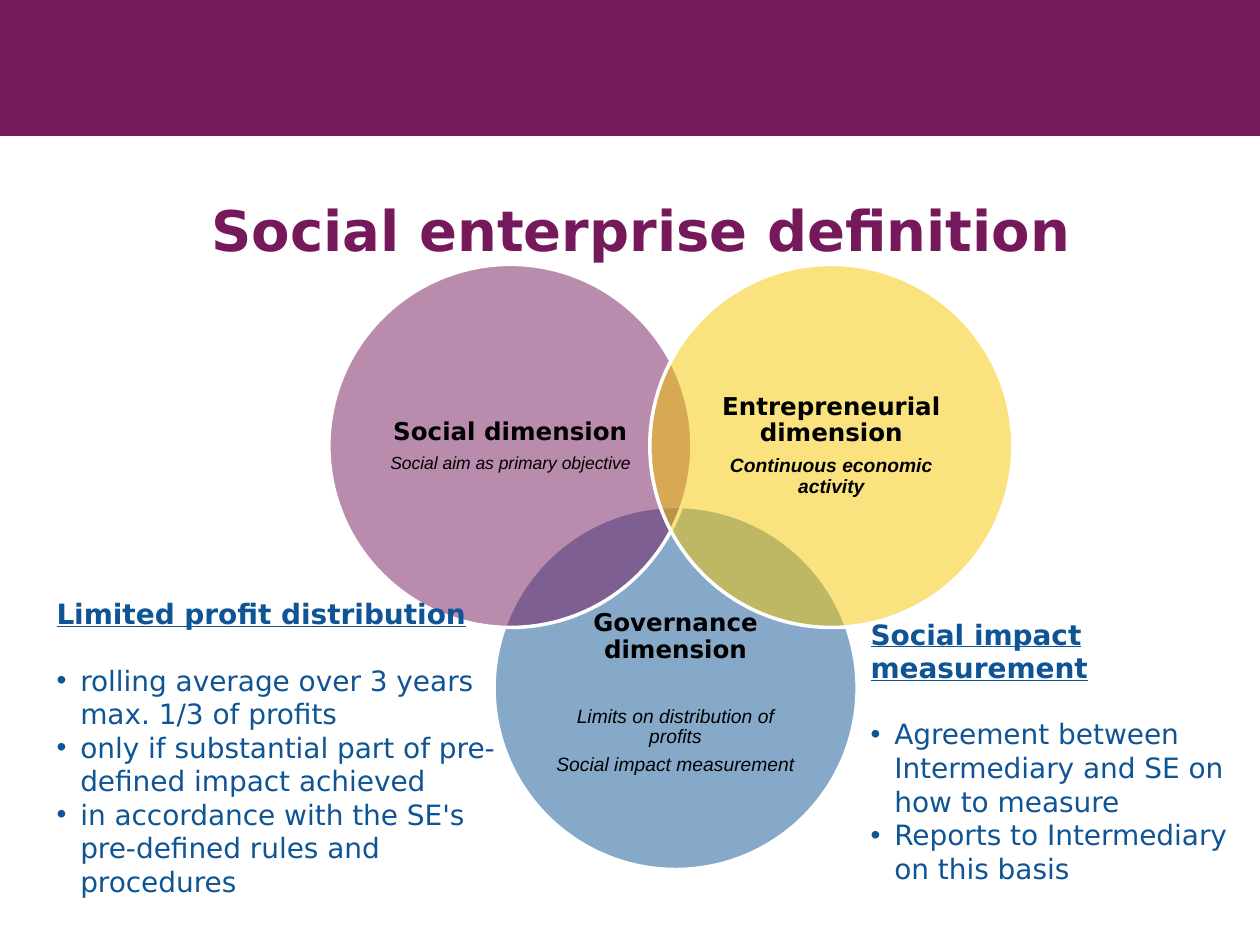
from lxml import etree
from pptx import Presentation
from pptx.dml.color import RGBColor
from pptx.enum.shapes import MSO_SHAPE
from pptx.enum.text import MSO_ANCHOR, MSO_AUTO_SIZE, PP_ALIGN
from pptx.oxml.ns import qn
from pptx.util import Cm, Pt

RECTANGLE, OVAL = MSO_SHAPE.RECTANGLE, MSO_SHAPE.OVAL
MIDDLE, CENTER, LEFT = MSO_ANCHOR.MIDDLE, PP_ALIGN.CENTER, PP_ALIGN.LEFT
FIT_TEXT = MSO_AUTO_SIZE.SHAPE_TO_FIT_TEXT

PURPLE = RGBColor(0x75, 0x19, 0x5B)
BLUE = RGBColor(0x0F, 0x54, 0x94)
YELLOW = RGBColor(0xF6, 0xC7, 0x00)
BLACK = RGBColor(0, 0, 0)
WHITE = RGBColor(0xFF, 0xFF, 0xFF)

HEADING_FONT, DETAIL_FONT = "DejaVu Sans", "Arial"
TITLE_SIZE, NOTE_SIZE, CIRCLE_SIZE = 32, 16, 14
DIAMETER = 7.32
NOTE_GAP = 18.6


class VennSlide:
    def __init__(self, deck):
        self.slide = deck.slides.add_slide(deck.slide_layouts[5])
        self.shapes = self.slide.shapes

    def span(self, para, text, size, color, font=HEADING_FONT, **marks):
        span = para.add_run()
        span.text = text
        span.font.name = font
        span.font.size = Pt(size)
        span.font.color.rgb = color
        span.font.bold = marks.get("bold", False)
        span.font.italic = marks.get("italic", False)
        span.font.underline = marks.get("underline", False)

    def paragraph(self, frame, align):
        """Return the empty first paragraph, or a new one after the rest."""
        first = frame.paragraphs[0]
        para = frame.add_paragraph() if first.runs else first
        para.alignment = align
        return para

    def band(self, height):
        band = self.shapes.add_shape(RECTANGLE, 0, 0, Cm(25.4), Cm(height))
        band.shadow.inherit = False
        band.fill.solid()
        band.fill.fore_color.rgb = PURPLE
        band.line.fill.background()

    def title(self, text, left, top, width, height):
        title = self.shapes.title
        title.left, title.top = Cm(left), Cm(top)
        title.width, title.height = Cm(width), Cm(height)
        frame = title.text_frame
        frame.vertical_anchor = MIDDLE
        self.span(self.paragraph(frame, CENTER), text, TITLE_SIZE, PURPLE, bold=True)

    def circle(self, left, top, color, heading, details, size,
               bold=False, gap=0, top_inset=0.15):
        circle = self.shapes.add_shape(OVAL, Cm(left), Cm(top), Cm(DIAMETER), Cm(DIAMETER))
        circle.shadow.inherit = False
        circle.fill.solid()
        circle.fill.fore_color.rgb = color
        color_element = circle.fill._xPr.find(qn("a:solidFill"))[0]
        etree.SubElement(color_element, qn("a:alpha"), val="50000")
        circle.line.color.rgb = WHITE
        circle.line.width = Pt(2)

        frame = circle.text_frame
        frame.word_wrap = True
        frame.vertical_anchor = MIDDLE
        frame.margin_left = frame.margin_right = frame.margin_bottom = Cm(0.15)
        frame.margin_top = Cm(top_inset)
        self.circle_line(frame, heading, CIRCLE_SIZE, HEADING_FONT, bold=True)
        for index, detail in enumerate(details):
            para = self.circle_line(frame, detail, size, DETAIL_FONT, bold=bold, italic=True)
            if gap and index == 0:
                para.space_before = Pt(gap)

    def circle_line(self, frame, text, size, font, **marks):
        para = self.paragraph(frame, CENTER)
        para.line_spacing = 0.9
        para.space_after = Pt(0.35 * size)
        self.span(para, text, size, BLACK, font, **marks)
        return para

    def note(self, left, top, width, height, heading, points):
        box = self.shapes.add_textbox(Cm(left), Cm(top), Cm(width), Cm(height))
        frame = box.text_frame
        frame.word_wrap = True
        frame.auto_size = FIT_TEXT
        self.span(self.paragraph(frame, LEFT), heading, NOTE_SIZE, BLUE,
                  bold=True, underline=True)
        for index, point in enumerate(points):
            para = self.paragraph(frame, LEFT)
            para.space_before = Pt(0 if index else NOTE_GAP)
            self.bullet(para)
            self.span(para, point, NOTE_SIZE, BLUE)

    def bullet(self, para):
        indent = Cm(0.48)
        properties = para._p.get_or_add_pPr()
        properties.set("marL", str(indent))
        properties.set("indent", str(-indent))
        etree.SubElement(properties, qn("a:buFont"), typeface=DETAIL_FONT)
        etree.SubElement(properties, qn("a:buChar"), char="•")


def main():
    deck = Presentation()
    deck.slide_width, deck.slide_height = Cm(25.4), Cm(19.05)
    venn = VennSlide(deck)
    venn.band(2.74)
    venn.title("Social enterprise definition", 1.5, 3.33, 22.86, 2.59)
    venn.circle(9.96, 10.21, BLUE, "Governance dimension",
                ["Limits on distribution of profits", "Social impact measurement"],
                11, gap=19.6, top_inset=0.35)
    venn.circle(6.63, 5.33, PURPLE, "Social dimension",
                ["Social aim as primary objective"], 10)
    venn.circle(13.1, 5.33, YELLOW, "Entrepreneurial dimension",
                ["Continuous economic activity"], 11, bold=True)
    venn.note(0.89, 11.91, 9.6, 6.88, "Limited profit distribution", [
        "rolling average over 3 years max. 1/3 of profits",
        "only if substantial part of pre-defined impact achieved",
        "in accordance with the SE's pre-defined rules and procedures",
    ])
    venn.note(17.3, 12.32, 7.8, 6.4, "Social impact measurement", [
        "Agreement between Intermediary and SE on how to measure",
        "Reports to Intermediary on this basis",
    ])
    deck.save("out.pptx")


if __name__ == "__main__":
    main()
